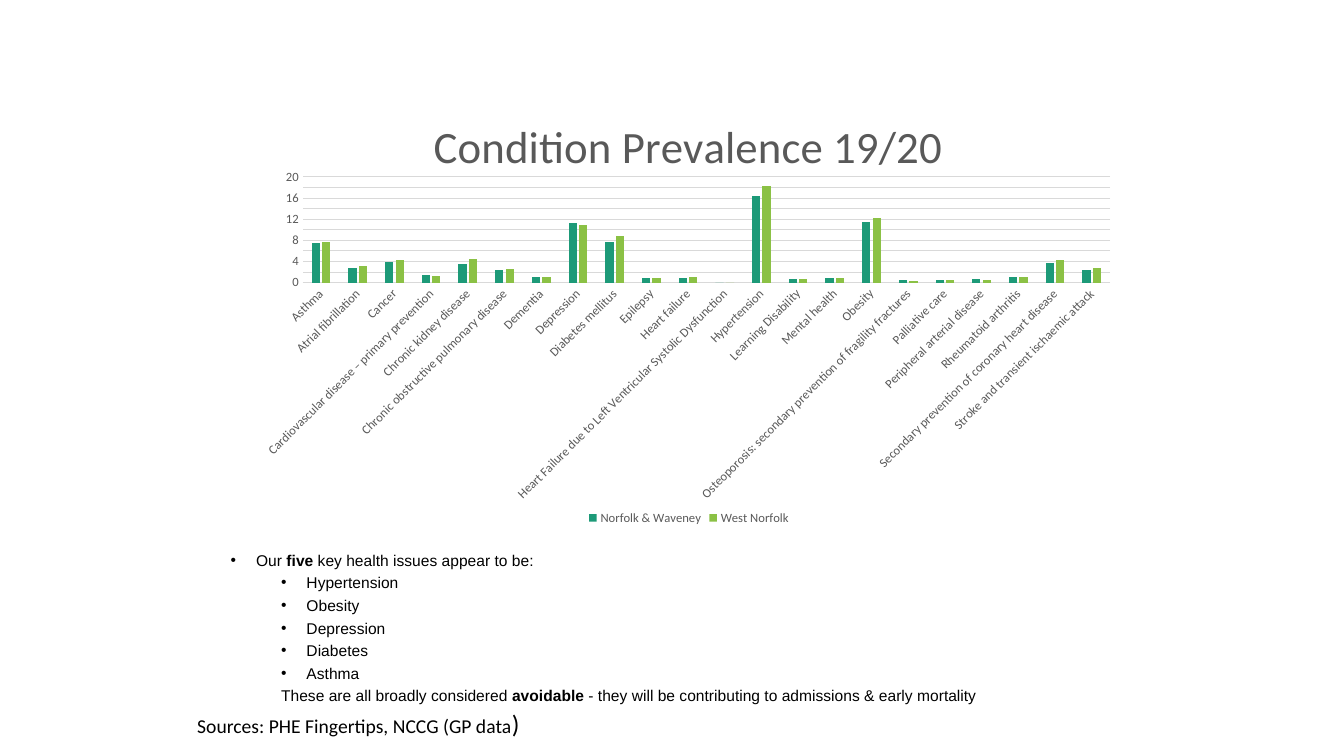
from lxml.etree import SubElement
from pptx import Presentation
from pptx.chart.data import CategoryChartData
from pptx.dml.color import RGBColor
from pptx.enum.chart import XL_CHART_TYPE, XL_LEGEND_POSITION, XL_TICK_MARK
from pptx.enum.text import MSO_ANCHOR, MSO_AUTO_SIZE, PP_ALIGN
from pptx.oxml import parse_xml
from pptx.oxml.ns import nsdecls, qn
from pptx.util import Cm, Pt

COLOURS = {
    "text": "000000",
    "chart_text": "595959",
    "grid": "D9D9D9",
    "Norfolk & Waveney": "1D9A78",
    "West Norfolk": "8BC145",
}

# Condition, Norfolk & Waveney, West Norfolk
PREVALENCE = [
    ("Asthma", 7.5, 7.6),
    ("Atrial fibrillation", 2.7, 3.2),
    ("Cancer", 3.9, 4.2),
    ("Cardiovascular disease – primary prevention", 1.4, 1.2),
    ("Chronic kidney disease", 3.6, 4.4),
    ("Chronic obstructive pulmonary disease", 2.3, 2.6),
    ("Dementia", 1, 1),
    ("Depression", 11.3, 10.9),
    ("Diabetes mellitus", 7.6, 8.8),
    ("Epilepsy", 0.9, 0.8),
    ("Heart failure", 0.9, 1.1),
    ("Heart Failure due to Left Ventricular Systolic Dysfunction", 0, 0),
    ("Hypertension", 16.3, 18.3),
    ("Learning Disability", 0.7, 0.7),
    ("Mental health", 0.9, 0.8),
    ("Obesity", 11.4, 12.2),
    ("Osteoporosis: secondary prevention of fragility fractures", 0.5, 0.4),
    ("Palliative care", 0.5, 0.5),
    ("Peripheral arterial disease", 0.7, 0.6),
    ("Rheumatoid arthritis", 1, 1.1),
    ("Secondary prevention of coronary heart disease", 3.7, 4.3),
    ("Stroke and transient ischaemic attack", 2.3, 2.7),
]
KEY_ISSUES = ["Hypertension", "Obesity", "Depression", "Diabetes", "Asthma"]


def colour(name):
    return RGBColor.from_string(COLOURS[name])


def style_font(font, name, size, colour_name):
    font.name = name
    font.size = Pt(size)
    font.color.rgb = colour(colour_name)


def set_layout(element, target, **fractions):
    """Place a chart part by fractions of the chart's width and height."""
    old_layout = element.find(qn("c:layout"))
    if old_layout is not None:
        element.remove(old_layout)
    settings = {"xMode": "edge", "yMode": "edge", **fractions}
    if target:
        settings = {"layoutTarget": target, **settings}
    layout = parse_xml(f"<c:layout {nsdecls('c')}><c:manualLayout/></c:layout>")
    for tag, value in settings.items():
        SubElement(layout[0], qn(f"c:{tag}")).set("val", str(value))
    return layout


def style_axis(axis):
    axis.major_tick_mark = axis.minor_tick_mark = XL_TICK_MARK.NONE
    style_font(axis.tick_labels.font, "Calibri", 9, "chart_text")


def add_prevalence_chart(slide):
    conditions, norfolk_waveney, west_norfolk = zip(*PREVALENCE)
    data = CategoryChartData()
    data.categories = conditions
    data.add_series("Norfolk & Waveney", norfolk_waveney)
    data.add_series("West Norfolk", west_norfolk)
    chart = slide.shapes.add_chart(
        XL_CHART_TYPE.COLUMN_CLUSTERED, Cm(6.3), Cm(2.24), Cm(22.12), Cm(11.1), data
    ).chart
    style_font(chart.font, "Calibri", 10, "text")

    chart.has_title = True
    paragraph = chart.chart_title.text_frame.paragraphs[0]
    paragraph.text = "Condition Prevalence 19/20"
    style_font(paragraph.font, "Calibri", 32, "chart_text")
    paragraph.font.bold = False
    title = chart.chart_title._element
    title.find(qn("c:tx")).addnext(set_layout(title, None, x=0.2, y=0.04))
    plot_area = chart._chartSpace.chart.plotArea
    plot_area.insert(0, set_layout(plot_area, "inner", x=0.06, y=0.2, w=0.92, h=0.24))

    chart.has_legend = True
    chart.legend.position = XL_LEGEND_POSITION.BOTTOM
    chart.legend.include_in_layout = False
    style_font(chart.legend.font, "Calibri", 9, "chart_text")

    style_axis(chart.category_axis)
    chart.category_axis.format.line.color.rgb = colour("grid")
    chart.category_axis.format.line.width = Pt(0.75)
    chart.category_axis.tick_labels.font._element.getparent().getparent().getparent().find(
        qn("a:bodyPr")
    ).set("rot", "-2700000")

    value_axis = chart.value_axis
    style_axis(value_axis)
    value_axis.minimum_scale, value_axis.maximum_scale, value_axis.major_unit = 0, 20, 2
    value_axis.format.line.fill.background()
    value_axis.major_gridlines.format.line.color.rgb = colour("grid")
    value_axis.major_gridlines.format.line.width = Pt(0.75)

    plot = chart.plots[0]
    plot.gap_width, plot.overlap, plot.vary_by_categories = 219, -27, False
    for series in plot.series:
        series.format.fill.solid()
        series.format.fill.fore_color.rgb = colour(series.name)


def fill_paragraph(paragraph, pieces, level, indent, hanging, bullet):
    """Write pieces of text, every second one bold, with an indent in centimetres."""
    properties = paragraph._p.get_or_add_pPr()
    properties.set("marL", str(Cm(indent)))
    properties.set("indent", str(-Cm(hanging)))
    if bullet:
        SubElement(properties, qn("a:buFont")).set("typeface", "Arial")
        SubElement(properties, qn("a:buChar")).set("char", "•")
    else:
        SubElement(properties, qn("a:buNone"))
    paragraph.level = level
    paragraph.alignment = PP_ALIGN.LEFT
    paragraph.line_spacing = 0.8
    style_font(paragraph.font, "Arial", 11.1, "text")
    for index, piece in enumerate(pieces):
        run = paragraph.add_run()
        run.text = piece
        style_font(run.font, "Arial", 11.1, "text")
        run.font.bold = index % 2 == 1


def fill_key_issues(placeholder):
    placeholder.left, placeholder.top = Cm(5.56), Cm(13.84)
    placeholder.width, placeholder.height = Cm(22.86), Cm(3.9)
    frame = placeholder.text_frame
    frame.word_wrap = True
    frame.auto_size = MSO_AUTO_SIZE.NONE
    frame.vertical_anchor = MSO_ANCHOR.TOP
    lines = [(["Our ", "five", " key health issues appear to be:"], 0, 0.64, 0.64, True)]
    lines += [([issue], 1, 1.91, 0.64, True) for issue in KEY_ISSUES]
    closing = [
        "These are all broadly considered ",
        "avoidable ",
        "- they will be contributing to admissions & early mortality",
    ]
    lines.append((closing, 1, 1.27, 0, False))
    for index, line in enumerate(lines):
        paragraph = frame.add_paragraph() if index else frame.paragraphs[0]
        fill_paragraph(paragraph, *line)
        paragraph.space_before = Pt(5.5 if index else 0)


def add_sources(slide):
    frame = slide.shapes.add_textbox(Cm(4.72), Cm(17.73), Cm(20.02), Cm(1.02)).text_frame
    frame.word_wrap = True
    for text, size in (("Sources: PHE Fingertips, NCCG (GP data", 14), (")", 18)):
        run = frame.paragraphs[0].add_run()
        run.text = text
        style_font(run.font, "Calibri", size, "text")


def main():
    presentation = Presentation()
    presentation.slide_width, presentation.slide_height = Cm(33.87), Cm(19.05)
    slide = presentation.slides.add_slide(presentation.slide_layouts[1])
    title = slide.shapes.title._element
    title.getparent().remove(title)
    fill_key_issues(slide.placeholders[1])
    add_sources(slide)
    add_prevalence_chart(slide)
    presentation.save("out.pptx")


if __name__ == "__main__":
    main()
